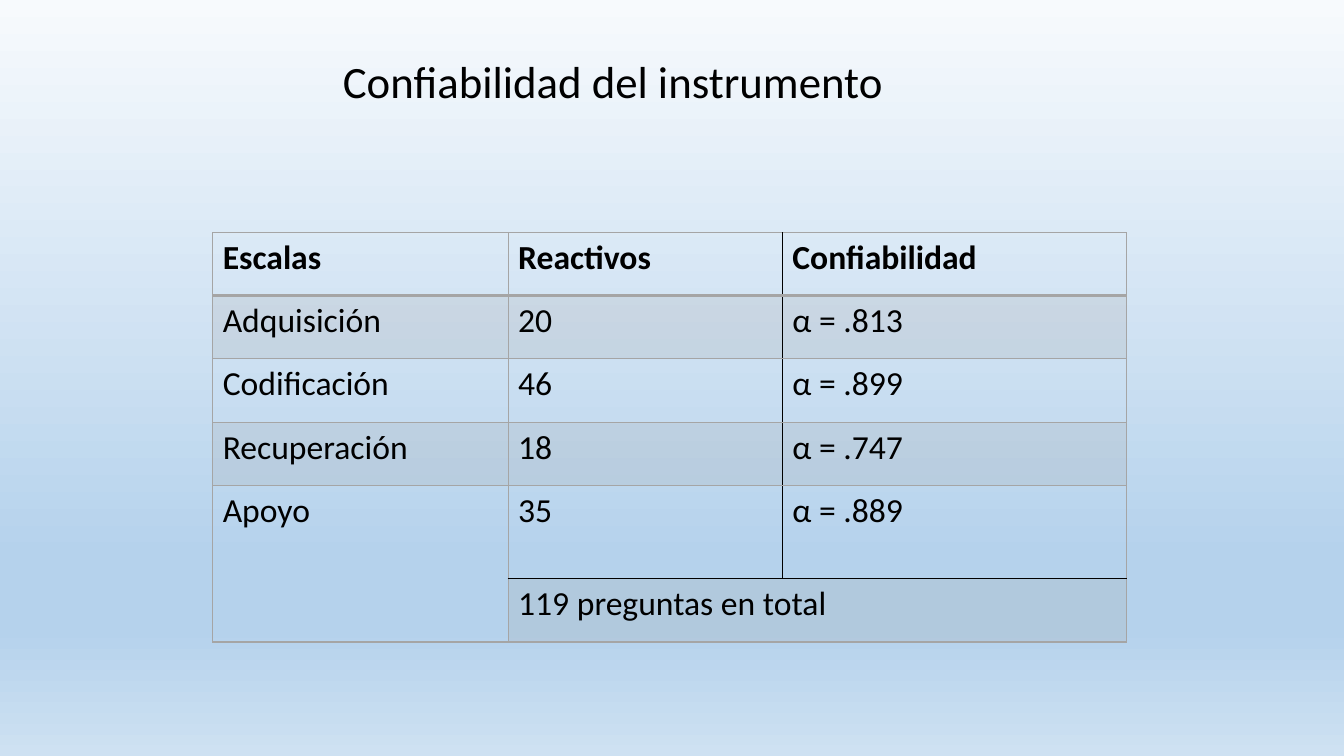
from lxml import etree
from pptx import Presentation
from pptx.dml.color import RGBColor
from pptx.enum.text import MSO_ANCHOR, PP_ALIGN
from pptx.oxml.ns import qn
from pptx.util import Inches, Pt

TOP, LEFT_ALIGN = MSO_ANCHOR.TOP, PP_ALIGN.LEFT
BLACK = RGBColor(0x00, 0x00, 0x00)
GRAY = RGBColor(0xA5, 0xA5, 0xA5)
PALE = RGBColor(0xF7, 0xFA, 0xFD)
SKY = RGBColor(0xB5, 0xD2, 0xEC)
MIST = RGBColor(0xCE, 0xE1, 0xF2)
FONT = "Calibri"


def style_text(paragraph, size, bold=False):
    paragraph.alignment = LEFT_ALIGN
    for run in paragraph.runs:
        run.font.name = FONT
        run.font.size = Pt(size)
        run.font.bold = bold
        run.font.color.rgb = BLACK


def set_borders(cell, borders):
    """Give the cell borders, listed as (tag, colour, points) in schema order."""
    properties = cell._tc.get_or_add_tcPr()
    for position, (tag, color, points) in enumerate(borders):
        line = etree.Element(qn(tag), w=str(Pt(points)))
        solid = etree.SubElement(line, qn("a:solidFill"))
        etree.SubElement(solid, qn("a:srgbClr"), val=str(color))
        properties.insert(position, line)


prs = Presentation()
prs.slide_width, prs.slide_height = Inches(13.33), Inches(7.5)
slide = prs.slides.add_slide(prs.slide_layouts[5])

# Background gradient, top to bottom
background = slide.background.fill
background.gradient()
background.gradient_angle = 270
stops = next(slide.element.iter(qn("a:gsLst")))
for stop in list(stops):
    stops.remove(stop)
for percent, color in [(0, PALE), (74, SKY), (83, SKY), (100, MIST)]:
    stop = etree.SubElement(stops, qn("a:gs"), pos=str(percent * 1000))
    etree.SubElement(stop, qn("a:srgbClr"), val=str(color))

# Title
title = slide.shapes.title
title.left, title.top = Inches(3.3), Inches(0.48)
title.width, title.height = Inches(6.14), Inches(0.64)
title.text_frame.text = "Confiabilidad del instrumento"
title.text_frame.vertical_anchor = TOP
style_text(title.text_frame.paragraphs[0], 32)

# Reliability table
rows = [
    ("Escalas", "Reactivos", "Confiabilidad"),
    ("Adquisición", "20", "α = .813"),
    ("Codificación", "46", "α = .899"),
    ("Recuperación", "18", "α = .747"),
    ("Apoyo", "35", "α = .889"),
    ("", "119 preguntas en total", ""),
]
column_widths = [2.93, 2.72, 3.41]
row_heights = [0.62, 0.63, 0.63, 0.63, 0.92, 0.63]
total_row = len(rows) - 1

table = slide.shapes.add_table(
    len(rows), len(column_widths), Inches(2.11), Inches(2.31),
    Inches(sum(column_widths)), Inches(sum(row_heights))).table
table.first_row = True
table.horz_banding = False
for column, width in zip(table.columns, column_widths):
    column.width = Inches(width)
for row, height in zip(table.rows, row_heights):
    row.height = Inches(height)

for r, texts in enumerate(rows):
    for c, text in enumerate(texts):
        cell = table.cell(r, c)
        cell.text_frame.text = text
        style_text(cell.text_frame.paragraphs[0], 24, bold=r == 0)

        shaded = r % 2 == 1 and (r < total_row or c > 0)
        if shaded:
            cell.fill.solid()
            cell.fill.fore_color.rgb = GRAY
            tint = next(cell._tc.tcPr.iter(qn("a:srgbClr")))
            etree.SubElement(tint, qn("a:alpha"), val="20000")
        else:
            cell.fill.background()

        above_total = r == total_row - 1 and c > 0
        in_total = r == total_row and c > 0
        set_borders(cell, [
            ("a:lnL", BLACK if c == 2 and r < total_row else GRAY, 1),
            ("a:lnR", BLACK if c == 1 and r < total_row else GRAY, 1),
            ("a:lnT", BLACK if in_total else GRAY, 2 if r == 1 else 1),
            ("a:lnB", BLACK if above_total else GRAY, 2 if r == 0 else 1),
        ])

table.cell(total_row - 1, 0).merge(table.cell(total_row, 0))
table.cell(total_row, 1).merge(table.cell(total_row, 2))

prs.save("out.pptx")
